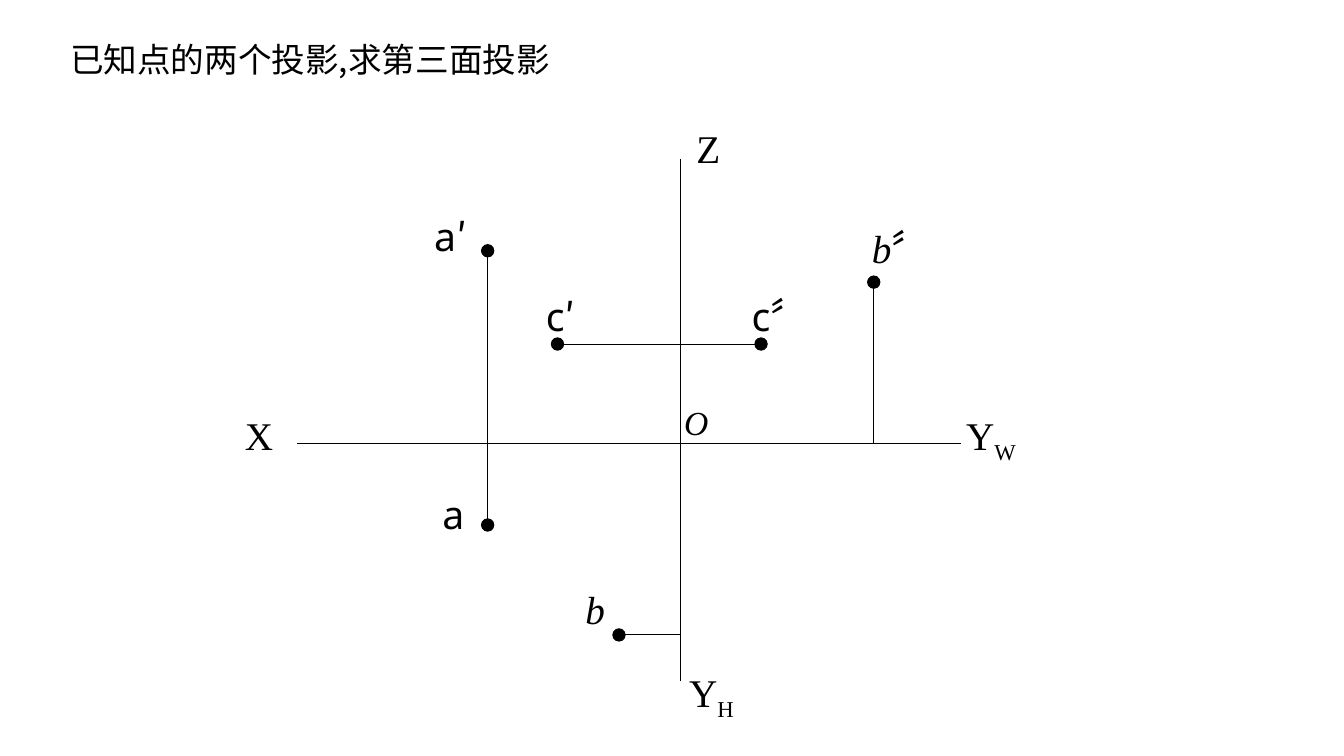
from dataclasses import dataclass
from typing import NamedTuple

import pptx
import pptx.dml.color
import pptx.enum.shapes
import pptx.enum.text
import pptx.oxml.ns
import pptx.util
from lxml import etree

Cm = pptx.util.Cm
COLORS = {"ink": "000000"}
SANS, CJK, SERIF = "Noto Sans", "Noto Sans CJK SC", "Times New Roman"
DOT = 0.31
LINE_WIDTH = 0.75


class Point(NamedTuple):
    x: float
    y: float


@dataclass(frozen=True)
class Run:
    text: str
    font: str
    italic: bool = False
    subscript: bool = False


@dataclass(frozen=True)
class Label:
    x: float
    y: float
    width: float
    runs: tuple[Run, ...]
    size: int = 28
    height: float = 1.45


ORIGIN = Point(17.15, 11.18)
A_FRONT, A_TOP = Point(12.29, 6.32), Point(12.29, 13.23)
B_SIDE, B_TOP = Point(22.02, 7.11), Point(15.6, 16)
C_FRONT, C_SIDE = Point(14.05, 8.67), Point(19.18, 8.67)

DOTS = (A_FRONT, A_TOP, B_SIDE, B_TOP, C_FRONT, C_SIDE)
LINES = (
    (Point(7.49, ORIGIN.y), Point(24.21, ORIGIN.y)),
    (Point(ORIGIN.x, 4.01), Point(ORIGIN.x, 17.17)),
    (A_FRONT, A_TOP),
    (C_FRONT, C_SIDE),
    (B_SIDE, Point(B_SIDE.x, ORIGIN.y)),
    (B_TOP, Point(ORIGIN.x, B_TOP.y)),
)

PRIME, DOUBLE_PRIME = Run("′", CJK), Run("〞", CJK)
LABELS = (
    Label(1.52, 0.86, 12.67, (Run("已知点的两个投影,求第三面投影", CJK),), 24, 1.27),
    Label(10.69, 5.23, 3, (Run("a", SANS), PRIME)),
    Label(10.9, 12.22, 2.79, (Run("a", SANS),)),
    Label(13.51, 7.24, 2.87, (Run("c", SANS), PRIME)),
    Label(18.69, 7.24, 3.15, (Run("c", SANS), DOUBLE_PRIME)),
    Label(21.72, 5.54, 3.02, (Run("b", SERIF, italic=True), DOUBLE_PRIME)),
    Label(14.5, 14.63, 2.84, (Run("b", SERIF, italic=True),)),
    Label(17.3, 3.02, 2.21, (Run("Z", SERIF),)),
    Label(17.12, 16.71, 2.77, (Run("Y", SERIF), Run("H", SERIF, subscript=True))),
    Label(24.1, 10.24, 3.15, (Run("Y", SERIF), Run("W", SERIF, subscript=True))),
    Label(5.92, 10.24, 2.01, (Run("X", SERIF),)),
    Label(16.99, 10.01, 1.4, (Run("O", SERIF, italic=True),), 24, 1.27),
)


def ink() -> pptx.dml.color.RGBColor:
    return pptx.dml.color.RGBColor.from_string(COLORS["ink"])


def add_line(slide, start: Point, end: Point) -> None:
    s = slide.shapes.add_connector(
        pptx.enum.shapes.MSO_CONNECTOR.STRAIGHT,
        Cm(start.x), Cm(start.y), Cm(end.x), Cm(end.y))
    s.line.color.rgb = ink()
    s.line.width = pptx.util.Pt(LINE_WIDTH)
    etree.SubElement(s._element.spPr, pptx.oxml.ns.qn("a:effectLst"))


def add_dot(slide, centre: Point) -> None:
    s = slide.shapes.add_shape(
        pptx.enum.shapes.MSO_SHAPE.OVAL,
        Cm(centre.x - DOT / 2), Cm(centre.y - DOT / 2), Cm(DOT), Cm(DOT))
    s.shadow.inherit = False
    s.fill.solid()
    s.fill.fore_color.rgb = ink()
    s.line.color.rgb = ink()
    s.line.width = pptx.util.Pt(LINE_WIDTH)


def add_label(slide, label: Label) -> None:
    s = slide.shapes.add_textbox(
        Cm(label.x), Cm(label.y), Cm(label.width), Cm(label.height))
    tf = s.text_frame
    tf.word_wrap = True
    tf.auto_size = pptx.enum.text.MSO_AUTO_SIZE.SHAPE_TO_FIT_TEXT
    p = tf.paragraphs[0]
    for run in label.runs:
        r = p.add_run()
        r.text = run.text
        r.font.size = pptx.util.Pt(label.size)
        r.font.italic = run.italic
        r.font.color.rgb = ink()
        r.font.name = run.font
        props = r._r.get_or_add_rPr()
        etree.SubElement(props, pptx.oxml.ns.qn("a:ea"), typeface=run.font)
        if run.subscript:
            props.set("baseline", "-25000")


def main() -> None:
    prs = pptx.Presentation()
    prs.slide_width, prs.slide_height = Cm(33.87), Cm(19.05)
    slide = prs.slides.add_slide(prs.slide_layouts[6])
    for start, end in LINES:
        add_line(slide, start, end)
    for centre in DOTS:
        add_dot(slide, centre)
    for label in LABELS:
        add_label(slide, label)
    prs.save("out.pptx")


if __name__ == "__main__":
    main()
